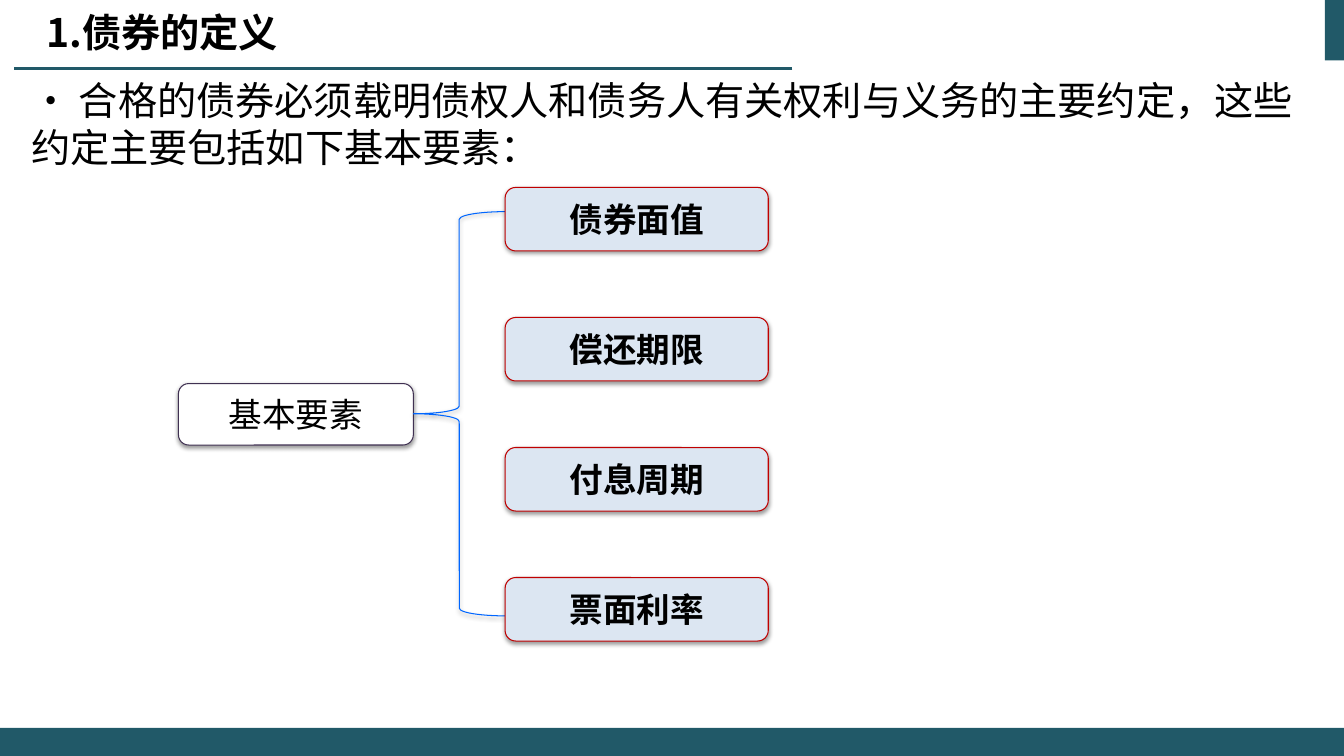
from dataclasses import dataclass

from lxml import etree
from pptx import Presentation
from pptx.dml.color import RGBColor
from pptx.enum.shapes import MSO_CONNECTOR, MSO_SHAPE
from pptx.enum.text import MSO_ANCHOR, PP_ALIGN
from pptx.oxml.ns import qn
from pptx.util import Inches, Pt

RECT, ROUND, BRACE = MSO_SHAPE.RECTANGLE, MSO_SHAPE.ROUNDED_RECTANGLE, MSO_SHAPE.LEFT_BRACE
STRAIGHT = MSO_CONNECTOR.STRAIGHT
LEFT, CENTER = PP_ALIGN.LEFT, PP_ALIGN.CENTER
TOP, MIDDLE = MSO_ANCHOR.TOP, MSO_ANCHOR.MIDDLE


@dataclass(frozen=True)
class Theme:
    """Colours, fonts and type sizes of the slide."""
    teal: str = "215968"
    black: str = "000000"
    white: str = "FFFFFF"
    purple: str = "403152"
    blue: str = "0066FF"
    red: str = "C00000"
    pale: str = "DCE6F2"
    chinese_font: str = "Noto Sans CJK SC"
    body_font: str = "Calibri"
    label_font: str = "Times New Roman"
    large: int = 28
    medium: int = 24
    intro_leading: int = 34


THEME = Theme()


def write(frame, *pieces, size=THEME.large, bold=False, align=LEFT, anchor=TOP, leading=None):
    """Write (text, Latin font name) pieces as one formatted paragraph."""
    frame.word_wrap = True
    frame.vertical_anchor = anchor
    paragraph = frame.paragraphs[0]
    paragraph.alignment = align
    if leading:
        paragraph.line_spacing = Pt(leading)
    for text, font_name in pieces:
        run = paragraph.add_run()
        run.text = text
        run.font.name = font_name
        run.font.size = Pt(size)
        run.font.bold = bold
        run.font.color.rgb = RGBColor.from_string(THEME.black)
        run.font._element.set("lang", "zh-CN")
        east_asian = etree.Element(qn("a:ea"), typeface=THEME.chinese_font)
        run.font._element.find(qn("a:latin")).addnext(east_asian)


def add_outline(slide, kind, box, fill=None, line=None, shadow=False):
    """Add a preset shape with optional fill, thin line and soft shadow."""
    shape = slide.shapes.add_shape(kind, *map(Inches, box))
    shape.shadow.inherit = False
    if fill:
        shape.fill.solid()
        shape.fill.fore_color.rgb = RGBColor.from_string(fill)
    else:
        shape.fill.background()
    if line:
        shape.line.color.rgb = RGBColor.from_string(line)
        shape.line.width = Pt(0.75)
    else:
        shape.line.fill.background()
    if shadow:
        effects = shape._element.spPr.find(qn("a:effectLst"))
        outer = etree.SubElement(effects, qn("a:outerShdw"), blurRad=str(Pt(3.1)),
                                 dist=str(Pt(1.6)), dir="5400000", rotWithShape="0")
        colour = etree.SubElement(outer, qn("a:srgbClr"), val=THEME.black)
        etree.SubElement(colour, qn("a:alpha"), val="38000")
    return shape


def add_label(slide, text, box, fill, line, bold=False):
    """Add a rounded box with a centred label."""
    label = add_outline(slide, ROUND, box, fill, line, shadow=True)
    write(label.text_frame, (text, THEME.label_font), size=THEME.medium,
          bold=bold, align=CENTER, anchor=MIDDLE)


def add_frame(slide, box):
    """Add the corner block, heading rule and footer band."""
    left, top, width, height = box
    add_outline(slide, RECT, (left + width - 0.19, top, 0.19, 0.6), THEME.teal)
    rule = slide.shapes.add_connector(STRAIGHT, Inches(left + 7.86), Inches(top + 0.68),
                                      Inches(left + 0.14), Inches(top + 0.68))
    rule.line.color.rgb = RGBColor.from_string(THEME.teal)
    rule.line.width = Pt(1.5)
    etree.SubElement(rule._element.spPr, qn("a:effectLst"))
    add_outline(slide, RECT, (left, top + height - 0.28, width, 0.28), THEME.teal)


def add_heading(slide, text, box):
    """Place and fill the title placeholder."""
    title = slide.shapes.title
    title.left, title.top, title.width, title.height = map(Inches, box)
    write(title.text_frame, (text, THEME.chinese_font), bold=True, anchor=MIDDLE)


def add_intro(slide, text, box):
    """Add the introductory bullet sentence."""
    intro = slide.shapes.add_textbox(*map(Inches, box))
    write(intro.text_frame, ("• ", THEME.label_font), (text, THEME.body_font),
          leading=THEME.intro_leading)


def add_element_tree(slide, root, elements, box):
    """Add a root label braced to an evenly spaced column of elements."""
    left, top, width, height = box
    element_width, element_height = 2.61, 0.63
    root_width, root_height = 2.33, 0.61
    middle = top + height / 2
    column = left + width - element_width
    pitch = (height - element_height) / (len(elements) - 1)
    add_label(slide, root, (left, middle - root_height / 2, root_width, root_height),
              THEME.white, THEME.purple)
    brace_left = left + root_width
    add_outline(slide, BRACE, (brace_left, top + 0.24, column - brace_left, height - 0.49),
                line=THEME.blue, shadow=True)
    for index, element in enumerate(elements):
        add_label(slide, element, (column, top + index * pitch, element_width, element_height),
                  THEME.pale, THEME.red, bold=True)


def main():
    """Build and save the slide."""
    deck = Presentation()
    deck.slide_width, deck.slide_height = Inches(13.33), Inches(7.5)
    slide = deck.slides.add_slide(deck.slide_layouts[5])
    add_frame(slide, (0, 0, 13.33, 7.5))
    add_heading(slide, "1.债券的定义", (0.36, 0.05, 5.05, 0.54))
    add_intro(slide, "合格的债券必须载明债权人和债务人有关权利与义务的主要约定，这些约定主要包括如下基本要素：",
              (0.21, 0.7, 12.91, 1.1))
    add_element_tree(slide, "基本要素", ["债券面值", "偿还期限", "付息周期", "票面利率"],
                     (1.77, 1.86, 5.85, 4.5))
    deck.save("out.pptx")


if __name__ == "__main__":
    main()
